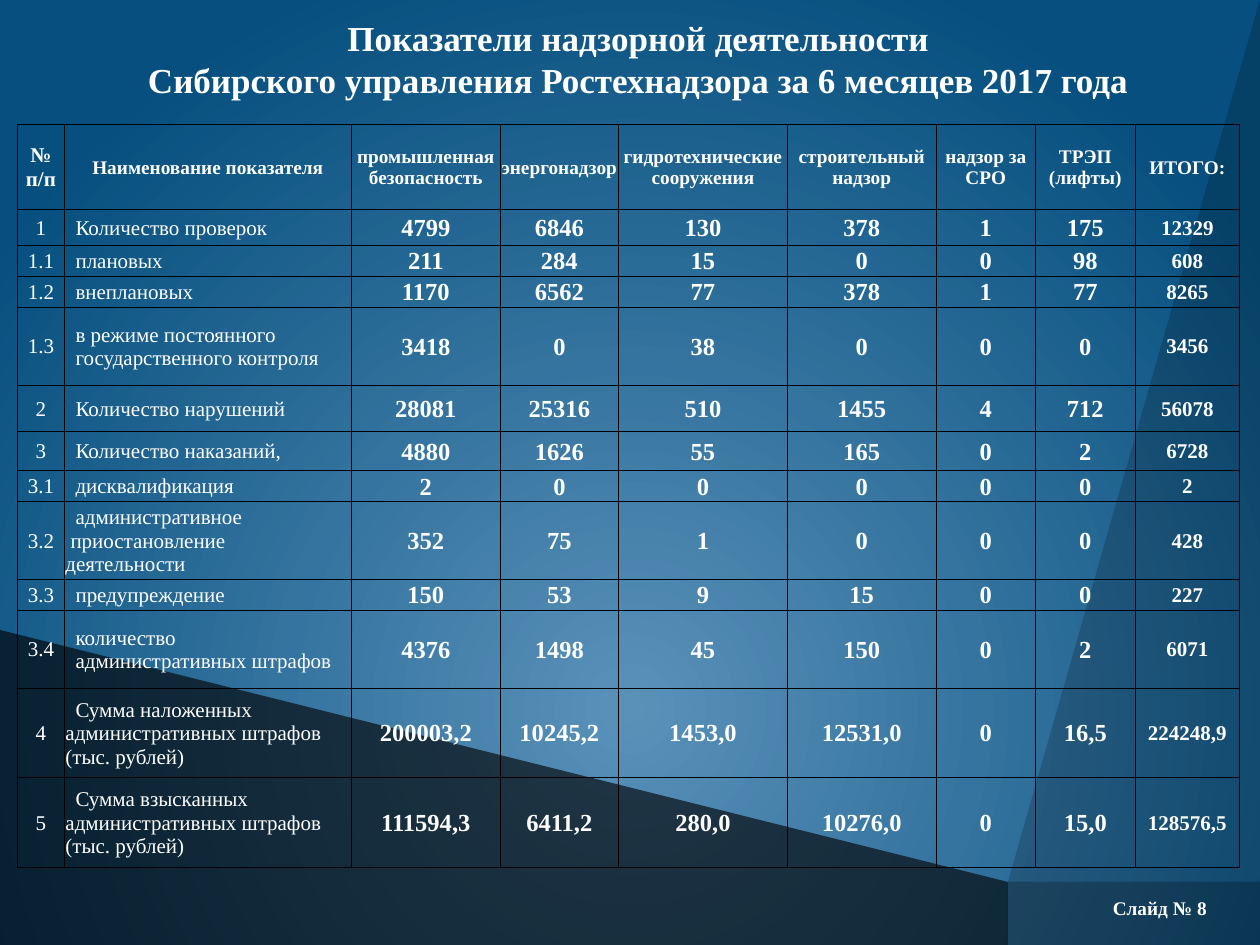
"""Build the slide with the supervision figures of the Siberian office for six months of 2017."""
from lxml.etree import SubElement
from pptx import Presentation
from pptx.dml.color import RGBColor
from pptx.enum.text import MSO_ANCHOR as Anchor, PP_ALIGN as Align
from pptx.oxml.ns import qn
from pptx.util import Inches, Pt

WHITE = RGBColor(0xFF, 0xFF, 0xFF)
BLACK = RGBColor(0, 0, 0)
GLOW = RGBColor(0x70, 0xB6, 0xE8)
DEEP = RGBColor(0x08, 0x63, 0x9E)
FONT = "Times New Roman"

PANELS = [
    (20, [(0, 0), (9.71, 0), (7.94, 6.61), (7.9, 6.67), (7.83, 6.68), (0, 4.58)]),
    (70, [(0, 4.68), (7.8, 6.78), (7.86, 6.82), (7.87, 6.89), (7.7, 7.5), (0, 7.5)]),
    (50, [(8.04, 6.85), (8.08, 6.85), (10, 7.37), (10, 7.5), (7.81, 7.5), (7.97, 6.92), (7.99, 6.87)]),
    (35, [(9.82, 0), (10, 0), (10, 7.26), (8.1, 6.75), (8.05, 6.71), (8.04, 6.64)]),
]
COLUMNS = [0.37, 2.28, 1.18, 0.94, 1.34, 1.18, 0.79, 0.79, 0.83]
HEADINGS = ["№ п/п", "Наименование показателя", "промышленная безопасность", "энергонадзор",
            "гидротехнические сооружения", "строительный надзор", "надзор за СРО",
            "ТРЭП (лифты)", "ИТОГО:"]
INDICATORS = [
    (0.29, "1", "Количество проверок", "4799 6846 130 378 1 175 12329"),
    (0.24, "1.1", "плановых", "211 284 15 0 0 98 608"),
    (0.24, "1.2", "внеплановых", "1170 6562 77 378 1 77 8265"),
    (0.62, "1.3", "в режиме постоянного\nгосударственного контроля", "3418 0 38 0 0 0 3456"),
    (0.37, "2", "Количество нарушений", "28081 25316 510 1455 4 712 56078"),
    (0.31, "3", "Количество наказаний,", "4880 1626 55 165 0 2 6728"),
    (0.24, "3.1", "дисквалификация", "2 0 0 0 0 0 2"),
    (0.62, "3.2", "административное\nприостановление деятельности", "352 75 1 0 0 0 428"),
    (0.24, "3.3", "предупреждение", "150 53 9 15 0 0 227"),
    (0.62, "3.4", "количество\nадминистративных штрафов", "4376 1498 45 150 0 2 6071"),
    (0.71, "4", "Сумма наложенных административных штрафов (тыс. рублей)",
     "200003,2 10245,2 1453,0 12531,0 0 16,5 224248,9"),
    (0.71, "5", "Сумма взысканных административных штрафов (тыс. рублей)",
     "111594,3 6411,2 280,0 10276,0 0 15,0 128576,5"),
]


def write(frame, text, size, bold=True, align=Align.CENTER):
    frame.text = text
    for paragraph in frame.paragraphs:
        paragraph.alignment = align
        font = paragraph.font
        font.name, font.size, font.bold = FONT, Pt(size), bold
        font.color.rgb = WHITE


def outline(cell):
    properties = cell._tc.get_or_add_tcPr()
    for place, side in enumerate(("a:lnL", "a:lnR", "a:lnT", "a:lnB")):
        edge = properties.makeelement(qn(side), {"w": str(Pt(0.5))})
        properties.insert(place, edge)
        SubElement(SubElement(edge, qn("a:solidFill")), qn("a:srgbClr"), val=str(BLACK))


prs = Presentation()
prs.slide_width, prs.slide_height = Inches(10), Inches(7.5)
slide = prs.slides.add_slide(prs.slide_layouts[5])

backdrop = slide.background.fill
backdrop.gradient()
for stop, color in zip(backdrop.gradient_stops, (GLOW, DEEP)):
    stop.color.rgb = color
linear = slide.element.find(".//" + qn("a:lin"))
radial = linear.makeelement(qn("a:path"), {"path": "circle"})
SubElement(radial, qn("a:fillToRect"), l="50000", t="50000", r="50000", b="0")
linear.getparent().replace(linear, radial)

for opacity, corners in PANELS:
    builder = slide.shapes.build_freeform(*corners[0], scale=Inches(1))
    builder.add_line_segments(corners[1:])
    panel = builder.convert_to_shape()
    panel.shadow.inherit = False
    panel.line.fill.background()
    panel.fill.solid()
    panel.fill.fore_color.rgb = BLACK
    shade = panel._element.spPr.find(".//" + qn("a:srgbClr"))
    SubElement(shade, qn("a:alpha"), val=str(opacity * 1000))

heading = slide.shapes.title
slide.shapes._spTree.append(heading._element)
heading.left, heading.top, heading.width, heading.height = map(Inches, (0.28, 0.08, 9.57, 0.77))
heading.text_frame.vertical_anchor = Anchor.TOP
write(heading.text_frame, "Показатели надзорной деятельности\n"
      "Сибирского управления Ростехнадзора за 6 месяцев 2017 года", 20)

page = slide.shapes.add_textbox(*map(Inches, (8.73, 7.06, 0.95, 0.29))).text_frame
page.word_wrap = False
page.vertical_anchor = Anchor.MIDDLE
write(page, "Слайд № 8", 11)

heights = [0.67] + [indicator[0] for indicator in INDICATORS]
contents = [HEADINGS] + [[number, name, *figures.split()] for _, number, name, figures in INDICATORS]
grid = slide.shapes.add_table(len(heights), len(COLUMNS), Inches(0.14), Inches(0.99),
                              Inches(sum(COLUMNS)), Inches(sum(heights))).table
grid.first_row = grid.horz_banding = False
for column, width in zip(grid.columns, COLUMNS):
    column.width = Inches(width)
for r, (height, values) in enumerate(zip(heights, contents)):
    grid.rows[r].height = Inches(height)
    for c, value in enumerate(values):
        cell = grid.cell(r, c)
        cell.fill.background()
        outline(cell)
        cell.vertical_anchor = Anchor.MIDDLE
        cell.margin_left = cell.margin_right = cell.margin_top = Inches(0.01)
        cell.margin_bottom = 0
        if r == 0:
            write(cell.text_frame, value, 11 if c else 12)
        elif c == 1:
            write(cell.text_frame, value, 12, False, Align.LEFT)
            for line in cell.text_frame.paragraphs:
                indent = 0.04 if line.text.startswith("приост") else 0.08
                line._p.get_or_add_pPr().set("indent", str(Inches(indent)))
        else:
            write(cell.text_frame, value, 14 if 1 < c < 8 else 12, c > 1)

prs.save("out.pptx")
